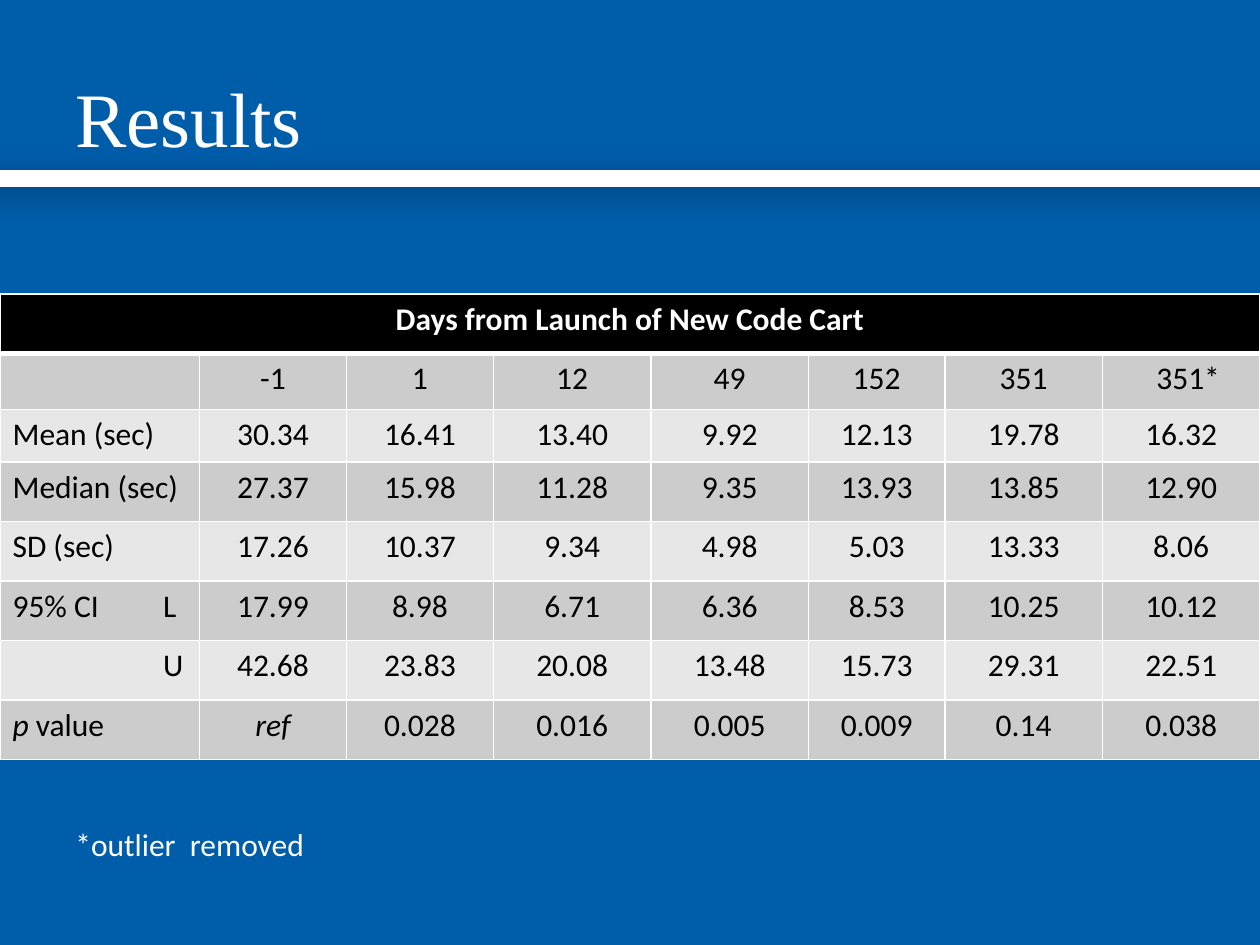
"""Builds the Results slide with its table of code cart timings."""
from lxml import etree
from pptx import Presentation
from pptx import util as u
from pptx.dml.color import RGBColor
from pptx.enum import shapes, text
from pptx.oxml import ns

COLORS = {"blue": "005DAA", "white": "FFFFFF", "black": "000000",
          "dark_band": "CCCCCC", "light_band": "E7E7E7"}
TITLE = "Results"
TABLE_TITLE = "Days from Launch of New Code Cart"
FOOTNOTE = "*outlier  removed"
ROWS = [
    ["", "-1", "1", "12", "49", "152", "351", "351*"],
    ["Mean (sec)", "30.34", "16.41", "13.40", "9.92", "12.13", "19.78", "16.32"],
    ["Median (sec)", "27.37", "15.98", "11.28", "9.35", "13.93", "13.85", "12.90"],
    ["SD (sec)", "17.26", "10.37", "9.34", "4.98", "5.03", "13.33", "8.06"],
    ["95% CI\tL", "17.99", "8.98", "6.71", "6.36", "8.53", "10.25", "10.12"],
    ["\tU", "42.68", "23.83", "20.08", "13.48", "15.73", "29.31", "22.51"],
    ["p value", "ref", "0.028", "0.016", "0.005", "0.009", "0.14", "0.038"],
]
ITALICS = {"p", "ref"}
COLUMN_WIDTHS = [114, 84, 84, 90, 90, 78, 90, 90]
ROW_HEIGHTS = [34, 32, 30] + [34] * 5
LIMIT_TAB = 86
STAR_INDENT = 8


def rgb(name):
    return RGBColor.from_string(COLORS[name])


def add_element(parent, tag, **attributes):
    element = etree.SubElement(parent, ns.qn(tag))
    for key, value in attributes.items():
        element.set(key, str(value))
    return element


def style(para, size, face, color, bold=False):
    para.font.size = u.Pt(size)
    para.font.name = face
    para.font.bold = bold
    para.font.color.rgb = rgb(color)


def add_text(page, words, place, size, face, anchor):
    box = page.shapes.add_textbox(*map(u.Pt, place))
    frame = box.text_frame
    frame.word_wrap = True
    frame.vertical_anchor = anchor
    frame.text = words
    style(frame.paragraphs[0], size, face, "white")


def add_rule(page):
    rule = page.shapes.add_connector(
        shapes.MSO_CONNECTOR.STRAIGHT, u.Pt(-24), u.Pt(102), u.Pt(744), u.Pt(102))
    rule.line.color.rgb = rgb("white")
    rule.line.width = u.Pt(10)
    effects = add_element(rule._element.spPr, "a:effectLst")
    shadow = add_element(effects, "a:outerShdw", blurRad=u.Pt(17), dist=u.Pt(4),
                         dir=90 * 60000, rotWithShape=0)
    color = add_element(shadow, "a:srgbClr", val=COLORS["black"])
    add_element(color, "a:alpha", val=25000)


def add_borders(cell, widths):
    properties = cell._tc.get_or_add_tcPr()
    for side, width in zip("LRTB", widths):
        line = add_element(properties, f"a:ln{side}", w=u.Pt(width))
        fill = add_element(line, "a:solidFill")
        add_element(fill, "a:srgbClr", val=COLORS["white"])


def fill_cell(cell, words, color, centred, bold=False):
    para = cell.text_frame.paragraphs[0]
    if centred:
        para.alignment = text.PP_ALIGN.CENTER
    if "\t" in words:
        tabs = add_element(para._p.get_or_add_pPr(), "a:tabLst")
        add_element(tabs, "a:tab", pos=u.Pt(LIMIT_TAB), algn="l")
    style(para, 18, "Calibri", color, bold)
    first, space, rest = words.partition(" ")
    pieces = [first, space + rest] if first in ITALICS else [words]
    for piece in filter(None, pieces):
        span = para.add_run()
        span.text = piece
        if piece in ITALICS:
            span.font.italic = True


def add_results(page):
    grid = page.shapes.add_table(
        len(ROW_HEIGHTS), len(COLUMN_WIDTHS), 0, u.Pt(168),
        u.Pt(sum(COLUMN_WIDTHS)), u.Pt(sum(ROW_HEIGHTS))).table
    for column, width in zip(grid.columns, COLUMN_WIDTHS):
        column.width = u.Pt(width)
    for row, height in zip(grid.rows, ROW_HEIGHTS):
        row.height = u.Pt(height)
    last = len(COLUMN_WIDTHS) - 1
    grid.cell(0, 0).merge(grid.cell(0, last))
    fill_cell(grid.cell(0, 0), TABLE_TITLE, "white", True, bold=True)
    for number, row in enumerate(grid.rows):
        band = "black" if number == 0 else ("light_band", "dark_band")[number % 2]
        widths = (1, 1, 3 if number == 1 else 1, 3 if number == 0 else 1)
        for cell in row.cells:
            add_borders(cell, widths)
            cell.fill.solid()
            cell.fill.fore_color.rgb = rgb(band)
    for number, values in enumerate(ROWS, 1):
        for place, words in enumerate(values):
            fill_cell(grid.cell(number, place), words, "black", place > 0)
    grid.cell(1, last).margin_left = u.Pt(7.2 + STAR_INDENT)


def main():
    deck = Presentation()
    deck.slide_width, deck.slide_height = u.Pt(720), u.Pt(540)
    page = deck.slides.add_slide(deck.slide_layouts[6])
    page.background.fill.solid()
    page.background.fill.fore_color.rgb = rgb("blue")
    add_rule(page)
    add_text(page, TITLE, (36, 21.6, 648, 90), 44, "Times New Roman",
             text.MSO_ANCHOR.MIDDLE)
    add_results(page)
    add_text(page, FOOTNOTE, (36, 468, 396, 29), 18, "Calibri", text.MSO_ANCHOR.TOP)
    deck.save("out.pptx")


if __name__ == "__main__":
    main()
